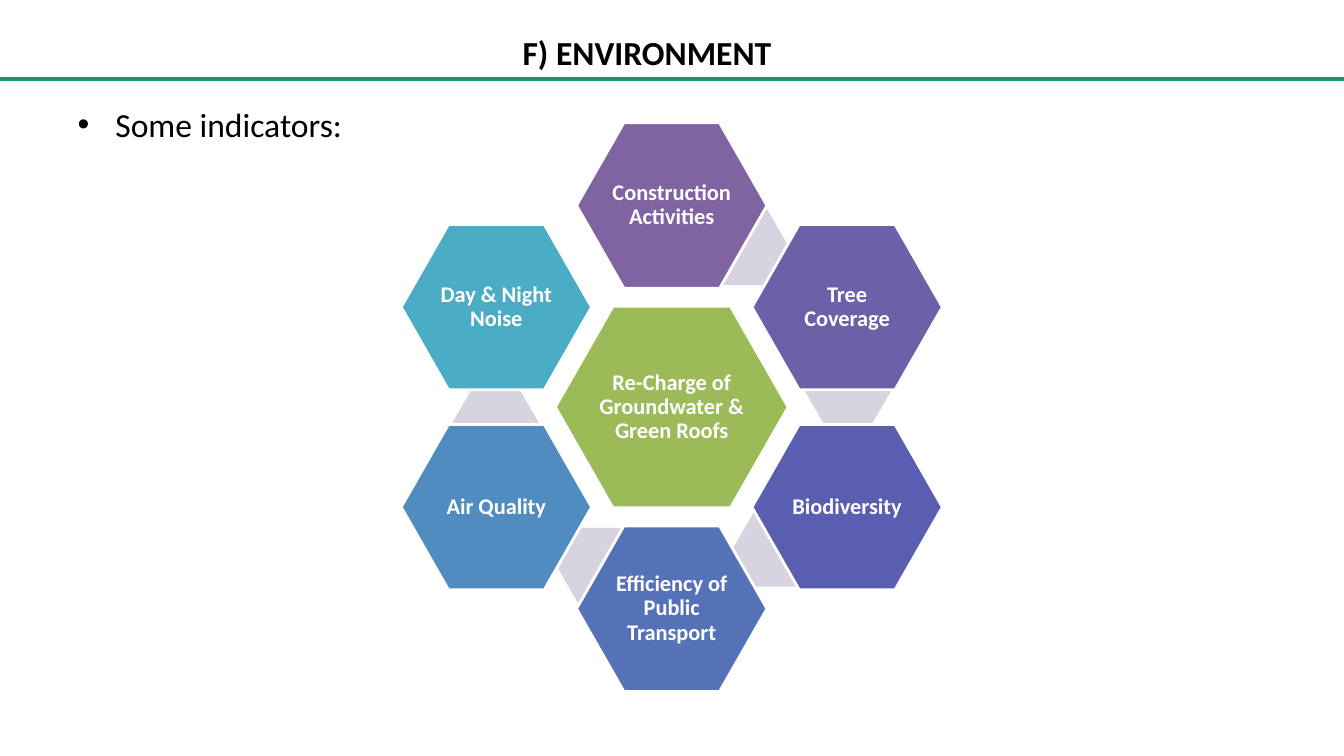
from pptx import Presentation
from pptx.dml.color import RGBColor
from pptx.enum.shapes import MSO_CONNECTOR, MSO_SHAPE
from pptx.enum.text import MSO_ANCHOR, PP_ALIGN
from pptx.oxml.ns import qn
from pptx.util import Cm, Pt

BLACK = RGBColor(0x00, 0x00, 0x00)
WHITE = RGBColor(0xFF, 0xFF, 0xFF)
RULE_GREEN = RGBColor(0x15, 0x99, 0x61)
LINK_GREY = RGBColor(0xD8, 0xD3, 0xE0)
GREEN = RGBColor(0x9B, 0xBB, 0x59)
PURPLE = RGBColor(0x80, 0x64, 0xA2)
VIOLET = RGBColor(0x6E, 0x5F, 0xA9)
INDIGO = RGBColor(0x5A, 0x5E, 0xB1)
BLUE = RGBColor(0x55, 0x72, 0xB8)
SKY = RGBColor(0x50, 0x8C, 0xBF)
TEAL = RGBColor(0x4B, 0xAC, 0xC6)

CENTER_X, CENTER_Y = 16.93, 10.26
COLUMN_STEP, HALF_ROW, FULL_ROW = 4.42, 2.52, 5.08


def add_hexagon(offset_x, offset_y, width, height, color, adjustment):
    shape = slide.shapes.add_shape(
        MSO_SHAPE.HEXAGON,
        Cm(CENTER_X + offset_x - width / 2), Cm(CENTER_Y + offset_y - height / 2),
        Cm(width), Cm(height))
    shape.adjustments[0] = adjustment
    shape.shadow.inherit = False
    shape.fill.solid()
    shape.fill.fore_color.rgb = color
    shape.line.fill.background()
    return shape


def add_indicator(label, offset_x, offset_y, width, height, color):
    shape = add_hexagon(offset_x, offset_y, width, height, color, 0.286)
    shape.line.color.rgb = WHITE
    shape.line.width = Pt(2)
    text_frame = shape.text_frame
    text_frame.word_wrap = True
    text_frame.vertical_anchor = MSO_ANCHOR.MIDDLE
    text_frame.margin_left = text_frame.margin_right = Cm(0.05)
    text_frame.margin_top = text_frame.margin_bottom = Cm(0.05)
    text_frame.text = label
    paragraph = text_frame.paragraphs[0]
    paragraph.alignment = PP_ALIGN.CENTER
    paragraph.line_spacing = 0.9
    paragraph.font.name = "Calibri"
    paragraph.font.size = Pt(16)
    paragraph.font.bold = True
    paragraph.font.color.rgb = WHITE


presentation = Presentation()
presentation.slide_width = Cm(33.87)
presentation.slide_height = Cm(19.05)
slide = presentation.slides.add_slide(presentation.slide_layouts[1])

title = slide.shapes.title
body = slide.placeholders[1]
placeholders = [
    (title, "F) ENVIRONMENT", (2.59, 0.2, 27.43, 2.24), True),
    (body, "Some indicators:", (1.7, 2.49, 30.48, 13.69), False),
]
for placeholder, text, (left, top, width, height), bold in placeholders:
    placeholder.left, placeholder.top = Cm(left), Cm(top)
    placeholder.width, placeholder.height = Cm(width), Cm(height)
    placeholder.text_frame.text = text
    paragraph = placeholder.text_frame.paragraphs[0]
    paragraph.space_before = Pt(0)
    font = paragraph.runs[0].font
    font.name = "Calibri"
    font.size = Pt(24)
    font.bold = bold
    font.color.rgb = BLACK

rule = slide.shapes.add_connector(
    MSO_CONNECTOR.STRAIGHT, 0, Cm(2), presentation.slide_width, Cm(2))
rule.line.color.rgb = RULE_GREEN
rule.line.width = Pt(3)
properties = rule.element.find(qn("p:spPr"))
properties.append(properties.makeelement(qn("a:effectLst"), {}))

add_indicator("Re-Charge of Groundwater & Green Roofs", 0, 0, 5.87, 5.08, GREEN)

indicators = [
    ("Construction Activities", 0, -FULL_ROW, PURPLE, (1.85, -4.03)),
    ("Tree Coverage", COLUMN_STEP, -HALF_ROW, VIOLET, (4.44, -0.44)),
    ("Biodiversity", COLUMN_STEP, HALF_ROW, INDIGO, (2.64, 3.57)),
    ("Efficiency of Public Transport", 0, FULL_ROW, BLUE, (-1.8, 4)),
    ("Air Quality", -COLUMN_STEP, HALF_ROW, SKY, (-4.44, 0.42)),
    ("Day & Night Noise", -COLUMN_STEP, -HALF_ROW, TEAL, None),
]
for label, offset_x, offset_y, color, link in indicators:
    if link:
        add_hexagon(*link, 2.21, 1.91, LINK_GREY, 0.289)
    add_indicator(label, offset_x, offset_y, 4.8, 4.17, color)

presentation.save("out.pptx")
